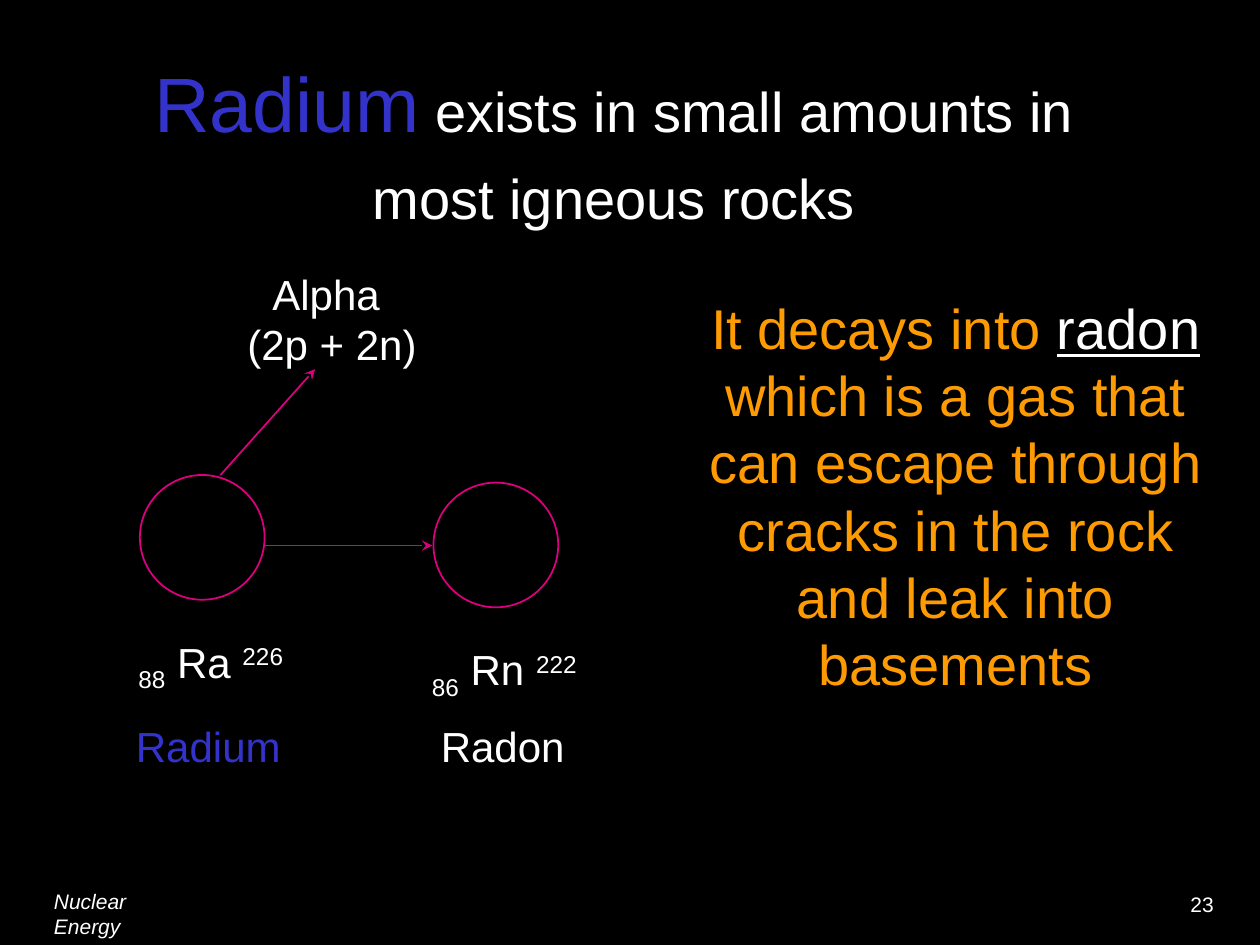
import pptx
import pptx.util
import pptx.dml.color
import pptx.enum.shapes
import pptx.enum.text
import pptx.oxml.ns
import lxml.etree

INK = {"back": "000000", "text": "FFFFFF", "blue": "3333CC",
       "gold": "FE9B03", "pink": "DC0081"}
ALIGN = pptx.enum.text.PP_ALIGN

deck = pptx.Presentation()
deck.slide_width = pptx.util.Inches(10)
deck.slide_height = pptx.util.Inches(7.5)
slide = deck.slides.add_slide(deck.slide_layouts[6])

# Grid of 100 columns by 75 rows
COL = deck.slide_width / 100
ROW = deck.slide_height / 75


def tint(name):
    return pptx.dml.color.RGBColor.from_string(INK[name])


def write(x, y, wide, high, lines, align=ALIGN.LEFT, wrap=False):
    """Each line is a list of runs: (text, size, colour, extras)."""
    box = slide.shapes.add_textbox(
        int(x * COL), int(y * ROW), int(wide * COL), int(high * ROW))
    frame = box.text_frame
    frame.word_wrap = wrap
    for row, runs in enumerate(lines):
        para = frame.add_paragraph() if row else frame.paragraphs[0]
        para.alignment = align
        for text, size, ink, extra in runs:
            run = para.add_run()
            run.text = text
            run.font.name = "Arial"
            run.font.size = pptx.util.Pt(size)
            run.font.color.rgb = tint(ink)
            run.font.italic = extra.get("italic")
            run.font.underline = extra.get("under")
            if "shift" in extra:
                run.font._element.set("baseline", str(extra["shift"] * 1000))
    return frame


slide.background.fill.solid()
slide.background.fill.fore_color.rgb = tint("back")

# Footer and page number
foot = write(3.3, 70, 13.5, 3,
             [[("Nuclear Energy", 12, "text", {"italic": True})]], wrap=True)
foot.margin_right = int(5 * COL)
write(93.5, 70.3, 4, 3, [[("23", 12, "text", {})]])

# Title
title = write(10.7, 3.9, 76.1, 14.7, [
    [("Radium", 44, "blue", {}),
     (" exists in small amounts in", 32, "text", {})],
    [("most igneous rocks", 32, "text", {})]], ALIGN.CENTER)
title.paragraphs[1].space_before = pptx.util.Pt(9)

# Atoms with their symbols
SIZE = 9.9
for x, y, low, sign, high in [(11.1, 37.7, "88", " Ra ", "226"),
                              (34.4, 38.3, "86", " Rn ", "222")]:
    atom = slide.shapes.add_shape(
        pptx.enum.shapes.MSO_SHAPE.OVAL,
        int(x * COL), int(y * ROW), int(SIZE * COL), int(SIZE * ROW))
    atom.shadow.inherit = False
    atom.fill.background()
    atom.line.color.rgb = tint("pink")
    atom.line.width = pptx.util.Pt(1)
    write(x - 1.1, y + 12.3, 14.3, 5, [[
        (low, 24, "text", {"shift": -25}),
        (sign, 24, "text", {}),
        (high, 24, "text", {"shift": 30})]])

# Names below the atoms
for x, wide, name, ink in [(9.8, 13.5, "Radium", "blue"),
                           (34, 11.9, "Radon", "text")]:
    write(x, 56.7, wide, 5, [[(name, 24, ink, {})]])

# Alpha particle
write(18.6, 20.8, 15.5, 9, [[("Alpha ", 24, "text", {})],
                            [("(2p + 2n)", 24, "text", {})]], ALIGN.CENTER)

# Decay arrows
for x1, y1, x2, y2 in [(17.5, 37.7, 25, 29.3), (21, 43.3, 34.3, 43.3)]:
    arrow = slide.shapes.add_connector(
        pptx.enum.shapes.MSO_CONNECTOR.STRAIGHT,
        int(x1 * COL), int(y1 * ROW), int(x2 * COL), int(y2 * ROW))
    arrow.line.color.rgb = tint("pink")
    arrow.line.width = pptx.util.Pt(1)
    lxml.etree.SubElement(arrow.line._get_or_add_ln(),
                          pptx.oxml.ns.qn("a:tailEnd"), type="stealth")
    lxml.etree.SubElement(arrow._element.spPr,
                          pptx.oxml.ns.qn("a:effectLst"))

# Explanation
write(55, 22.8, 41.7, 33, [[
    ("It decays into ", 32, "gold", {}),
    ("radon", 32, "text", {"under": True}),
    (" which is a gas that can escape through cracks in the rock"
     " and leak into basements", 32, "gold", {})]], ALIGN.CENTER, wrap=True)

deck.save("out.pptx")
